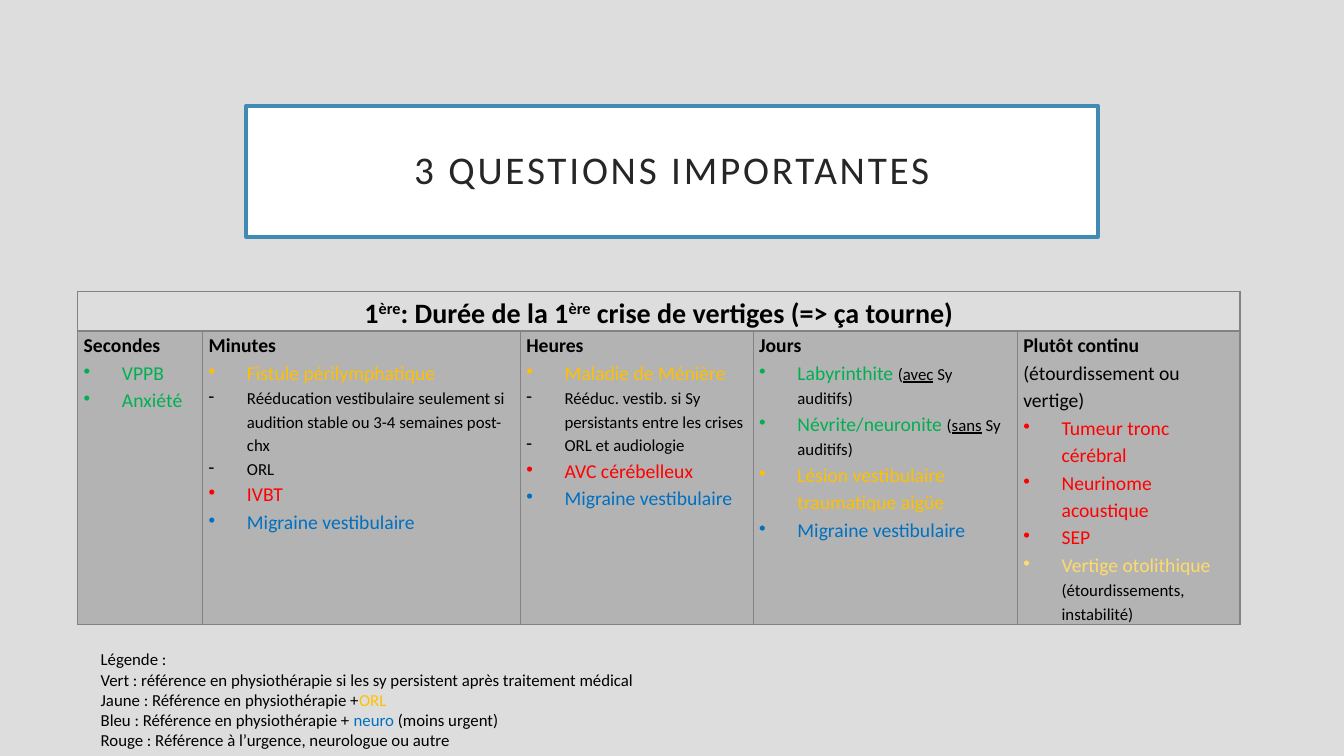
from copy import deepcopy

from lxml.etree import SubElement
from pptx import Presentation
from pptx.dml.color import RGBColor
from pptx.enum.shapes import MSO_SHAPE
from pptx.enum.text import MSO_ANCHOR, PP_ALIGN
from pptx.oxml.ns import qn
from pptx.util import Pt

PX = 9144
COLOURS = {
    "background": "DDDDDD", "white": "FFFFFF", "frame": "418AB3", "title": "262626",
    "black": "000000", "grid": "838383", "shade": "0D0D0D", "green": "00B050",
    "yellow": "FFC000", "pale": "FEDB6A", "blue": "0070C0", "red": "FF0000",
}
COLUMN_WIDTHS = [124, 315, 231, 262, 221]
ROW_HEIGHTS = [36, 290]


def rgb(name):
    """Return a palette colour."""
    return RGBColor.from_string(COLOURS[name])


def item(words, colour, *details):
    """Return a bulleted paragraph with optional further runs."""
    return "•", [(words, {"colour": colour}), *details]


def dash(words):
    """Return a small paragraph with a dash."""
    return "-", [(words, {"size": 12})]


def heading(words, *details):
    """Return the bold heading of a duration."""
    return None, [(words, {"bold": True}), *details]


def hearing(preposition):
    """Return the runs that qualify a disease by its hearing symptoms."""
    small = {"size": 12}
    return [("(", small), (preposition, {"size": 12, "underline": True}),
            (" Sy auditifs)", small)]


DURATIONS = [
    [heading("Secondes"), item("VPPB", "green"), item("Anxiété", "green")],
    [heading("Minutes"), item("Fistule périlymphatique", "yellow"),
     dash("Rééducation vestibulaire seulement si audition stable ou 3-4 semaines post-chx"),
     dash("ORL"), item("IVBT", "red"), item("Migraine vestibulaire", "blue")],
    [heading("Heures"), item("Maladie de Ménière", "yellow"),
     dash("Rééduc. vestib. si Sy persistants entre les crises"),
     dash("ORL et audiologie"), item("AVC cérébelleux", "red"),
     item("Migraine vestibulaire", "blue")],
    [heading("Jours"), item("Labyrinthite ", "green", *hearing("avec")),
     item("Névrite/neuronite ", "green", *hearing("sans")),
     item("Lésion vestibulaire traumatique aigüe", "yellow"),
     item("Migraine vestibulaire", "blue")],
    [heading("Plutôt continu\n", ("(étourdissement ou vertige)", {})),
     item("Tumeur tronc cérébral", "red"), item("Neurinome acoustique", "red"),
     item("SEP", "red"),
     item("Vertige otolithique\n", "pale", ("(étourdissements, instabilité)", {"size": 12}))],
]
QUESTION = [(None, [
    ("1", {}), ("ère", {"raised": True}), (": Durée de la 1", {}),
    ("ère", {"raised": True}), (" crise de vertiges (=> ça tourne)", {}),
])]
LEGEND = [
    (None, [("Légende :", {})]),
    (None, [("Vert : référence en physiothérapie si les sy persistent après traitement médical", {})]),
    (None, [("Jaune : Référence en physiothérapie +", {}), ("ORL", {"colour": "yellow"})]),
    (None, [("Bleu : Référence en physiothérapie + ", {}), ("neuro", {"colour": "blue"}),
            (" (moins urgent)", {})]),
    (None, [("Rouge : Référence à l’urgence, neurologue ou autre", {})]),
]


def write_run(paragraph, words, size=14, colour="black", bold=False, underline=False,
              raised=False, spacing=0):
    """Add one formatted run, with a line break after it if it ends in one."""
    run = paragraph.add_run()
    run.text = words.rstrip("\n")
    run.font.name = "Calibri"
    run.font.size = Pt(size)
    run.font.bold = bold
    run.font.underline = underline
    run.font.color.rgb = rgb(colour)
    properties = run.font._element
    if raised:
        properties.set("baseline", "30000")
    if spacing:
        properties.set("spc", str(spacing * 100))
    if words.endswith("\n"):
        paragraph.add_line_break()
        paragraph._p[-1].append(deepcopy(properties))


def write(frame, paragraphs, align=PP_ALIGN.LEFT, line_spacing=1.0, **style):
    """Fill a text frame with paragraphs of runs."""
    frame.word_wrap = True
    for index, (bullet, runs) in enumerate(paragraphs):
        paragraph = frame.add_paragraph() if index else frame.paragraphs[0]
        paragraph.alignment = align
        paragraph.line_spacing = line_spacing
        if bullet:
            properties = paragraph._p.get_or_add_pPr()
            properties.set("marL", str(38 * PX))
            properties.set("indent", str(-38 * PX))
            SubElement(properties, qn("a:buChar")).set("char", bullet)
        for words, changes in runs:
            write_run(paragraph, words, **{**style, **changes})


def title_box(slide, left, top, width, height):
    """Draw the framed title."""
    box = slide.shapes.add_shape(
        MSO_SHAPE.RECTANGLE, left * PX, top * PX, width * PX, height * PX)
    box.shadow.inherit = False
    box.fill.solid()
    box.fill.fore_color.rgb = rgb("white")
    box.line.color.rgb = rgb("frame")
    box.line.width = Pt(2.5)
    box.text_frame.vertical_anchor = MSO_ANCHOR.MIDDLE
    write(box.text_frame, [(None, [("3 QUESTIONS IMPORTANTES", {})])],
          align=PP_ALIGN.CENTER, line_spacing=0.9, size=28, colour="title", spacing=2)


def style_cell(cell, shaded, bottom_width):
    """Set the margins, fill and borders of a cell."""
    cell.margin_left = cell.margin_right = 6 * PX
    cell.margin_top = cell.margin_bottom = 0
    properties = cell._tc.get_or_add_tcPr()
    if shaded:
        cell.fill.solid()
        cell.fill.fore_color.rgb = rgb("shade")
        shade = properties.find(".//" + qn("a:srgbClr"))
        SubElement(shade, qn("a:alpha")).set("val", "20000")
    else:
        cell.fill.background()
    for place, side in enumerate(["lnL", "lnR", "lnT", "lnB"]):
        border = SubElement(properties, qn("a:" + side))
        border.set("w", str(Pt(bottom_width if side == "lnB" else 1)))
        SubElement(SubElement(border, qn("a:solidFill")), qn("a:srgbClr")).set(
            "val", COLOURS["grid"])
        properties.insert(place, border)


def duration_table(slide, left, top, width, height):
    """Draw the table of causes by duration of the first crisis."""
    table = slide.shapes.add_table(
        2, len(DURATIONS), left * PX, top * PX, width * PX, height * PX).table
    table.first_row = table.horz_banding = False
    for column, column_width in zip(table.columns, COLUMN_WIDTHS):
        column.width = column_width * PX
    for row, row_height in zip(table.rows, ROW_HEIGHTS):
        row.height = row_height * PX
    for index, causes in enumerate(DURATIONS):
        style_cell(table.cell(0, index), shaded=False, bottom_width=2)
        style_cell(table.cell(1, index), shaded=True, bottom_width=1)
        write(table.cell(1, index).text_frame, causes, line_spacing=1.15)
    question = table.cell(0, 0)
    question.merge(table.cell(0, len(DURATIONS) - 1))
    question.vertical_anchor = MSO_ANCHOR.MIDDLE
    write(question.text_frame, QUESTION, align=PP_ALIGN.CENTER, line_spacing=1.15,
          size=20, bold=True)


def legend_box(slide, left, top, width, height):
    """Write the colour legend."""
    box = slide.shapes.add_textbox(left * PX, top * PX, width * PX, height * PX)
    write(box.text_frame, LEGEND, size=12)


def main():
    """Build and save the slide."""
    presentation = Presentation()
    presentation.slide_width = 1333 * PX
    presentation.slide_height = 750 * PX
    slide = presentation.slides.add_slide(presentation.slide_layouts[6])
    slide.background.fill.solid()
    slide.background.fill.fore_color.rgb = rgb("background")
    title_box(slide, 244, 105, 845, 130)
    duration_table(slide, 77, 289, sum(COLUMN_WIDTHS), sum(ROW_HEIGHTS))
    legend_box(slide, 90, 639, 589, 111)
    presentation.save("out.pptx")


if __name__ == "__main__":
    main()
